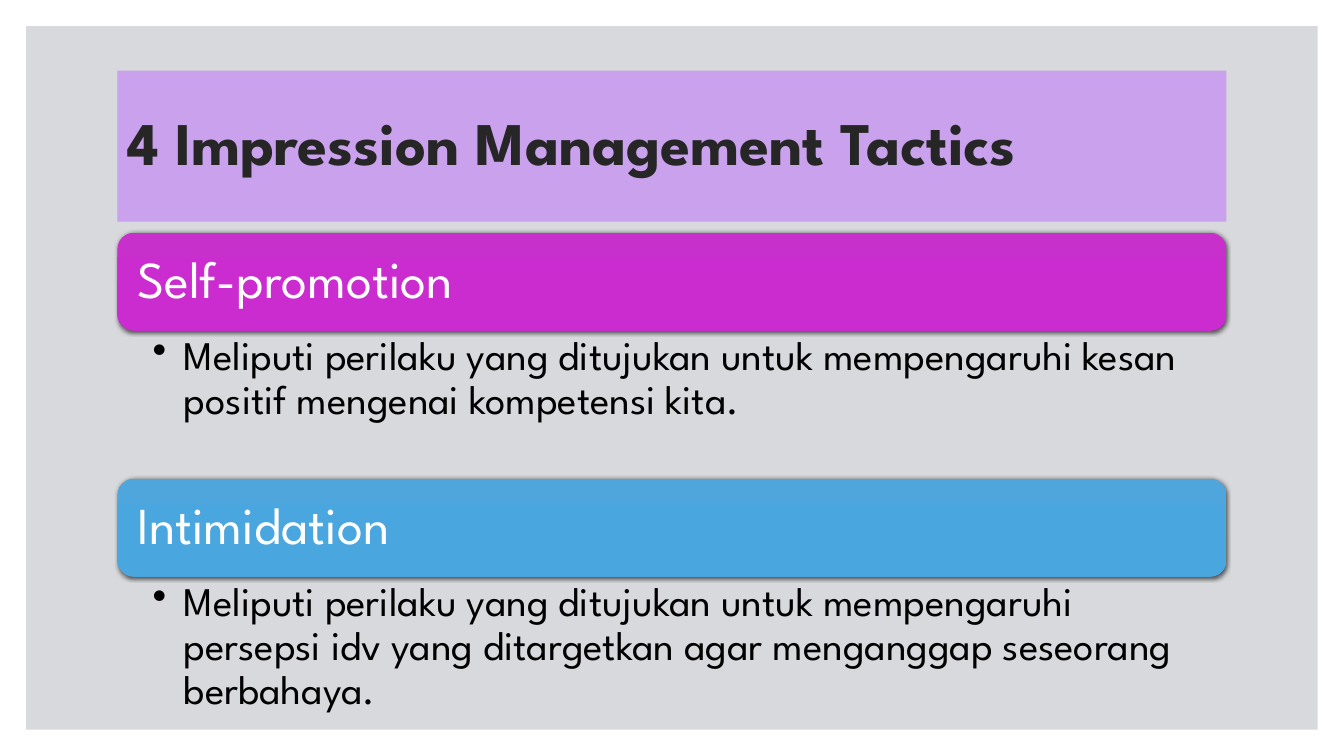
from copy import deepcopy
from dataclasses import dataclass

from lxml import etree
from pptx import Presentation
from pptx.dml.color import RGBColor
from pptx.enum.shapes import MSO_SHAPE
from pptx.enum.text import MSO_ANCHOR, PP_ALIGN
from pptx.oxml import parse_xml
from pptx.oxml.ns import nsdecls, qn
from pptx.util import Inches, Pt

RECTANGLE, ROUNDED = MSO_SHAPE.RECTANGLE, MSO_SHAPE.ROUNDED_RECTANGLE
TOP, MIDDLE = MSO_ANCHOR.TOP, MSO_ANCHOR.MIDDLE
LEFT = PP_ALIGN.LEFT

TITLE = "4 Impression Management Tactics"
TACTICS = [
    ("Self-promotion",
     "Meliputi perilaku yang ditujukan untuk mempengaruhi kesan positif mengenai kompetensi kita.",
     ("C830CC", "CB2CCF", "CA2CCE")),
    ("Intimidation",
     "Meliputi perilaku yang ditujukan untuk mempengaruhi persepsi idv yang ditargetkan "
     "agar menganggap seseorang berbahaya.",
     ("4EA6DC", "4AA6DF", "4AA5DE")),
]


@dataclass(frozen=True)
class Theme:
    font: str = "League Spartan"
    panel: str = "D8D9DC"
    title_fill: str = "CAA1EC"
    title_text: str = "262626"
    header_text: str = "FFFFFF"
    body_text: str = "000000"
    title_size: float = 43.2
    header_size: float = 37
    body_size: float = 29


THEME = Theme()
WIDTH, HEIGHT = 13.33, 7.5
MARGIN = 0.26
CONTENT_WIDTH = 11
CONTENT_LEFT = (WIDTH - CONTENT_WIDTH) / 2
TITLE_TOP, TITLE_HEIGHT = 0.7, 1.5
TACTICS_TOP = 2.31
HEADER_HEIGHT, BODY_HEIGHT = 0.97, 1.47
BULLET_INDENT = 0.31


def add_block(slide, kind, left, top, width, height, color=None):
    shape = slide.shapes.add_shape(kind, *map(Inches, (left, top, width, height)))
    shape.shadow.inherit = False
    shape.line.fill.background()
    if color:
        shape.fill.solid()
        shape.fill.fore_color.rgb = RGBColor.from_string(color)
    return shape


def write(shape, text, size, color, anchor, insets, bold=False):
    frame = shape.text_frame
    frame.text = text
    frame.word_wrap = True
    frame.vertical_anchor = anchor
    frame.margin_left, frame.margin_top, frame.margin_right, frame.margin_bottom = map(Inches, insets)
    paragraph = frame.paragraphs[0]
    paragraph.alignment = LEFT
    paragraph.line_spacing = 0.9
    font = paragraph.runs[0].font
    font.name, font.size, font.bold = THEME.font, Pt(size), bold
    font.color.rgb = RGBColor.from_string(color)
    return paragraph


def shade(shape, colors):
    shape.fill.gradient()
    shape.fill.gradient_angle = 270
    first = shape.fill.gradient_stops[0]
    stops = shape.element.spPr.find(qn("a:gradFill")).find(qn("a:gsLst"))
    stops.insert(1, deepcopy(stops[0]))
    for stop, color, position in zip(shape.fill.gradient_stops, colors, (0, 0.5, 1)):
        stop.color.rgb = RGBColor.from_string(color)
        stop.position = position


def add_shadow(shape):
    effects = shape.element.spPr.find(qn("a:effectLst"))
    effects.append(parse_xml(
        f'<a:outerShdw {nsdecls("a")} blurRad="{Pt(3)}" dist="{Pt(1)}" dir="5400000" '
        'algn="ctr" rotWithShape="0"><a:srgbClr val="000000"><a:alpha val="63000"/>'
        '</a:srgbClr></a:outerShdw>'))


def add_bullet(paragraph):
    properties = paragraph._p.get_or_add_pPr()
    properties.set("marL", str(Inches(BULLET_INDENT)))
    properties.set("indent", str(-Inches(BULLET_INDENT)))
    etree.SubElement(properties, qn("a:buChar"), char="•")


def add_tactic(slide, top, name, description, colors):
    header = add_block(slide, ROUNDED, CONTENT_LEFT, top, CONTENT_WIDTH, HEADER_HEIGHT)
    shade(header, colors)
    add_shadow(header)
    write(header, name, THEME.header_size, THEME.header_text, MIDDLE, (0.15, 0.15, 0.15, 0.15))
    body = slide.shapes.add_textbox(*map(Inches, (
        CONTENT_LEFT, top + HEADER_HEIGHT, CONTENT_WIDTH, BODY_HEIGHT)))
    add_bullet(write(body, description, THEME.body_size, THEME.body_text, TOP,
                     (0.35, 0.05, 0.29, 0.05)))


def main():
    presentation = Presentation()
    presentation.slide_width, presentation.slide_height = Inches(WIDTH), Inches(HEIGHT)
    slide = presentation.slides.add_slide(presentation.slide_layouts[6])
    add_block(slide, RECTANGLE, MARGIN, MARGIN, WIDTH - 2 * MARGIN, HEIGHT - 2 * MARGIN, THEME.panel)
    title = add_block(slide, RECTANGLE, CONTENT_LEFT, TITLE_TOP, CONTENT_WIDTH, TITLE_HEIGHT,
                      THEME.title_fill)
    write(title, TITLE, THEME.title_size, THEME.title_text, MIDDLE, (0.1, 0.05, 0.1, 0.05), True)
    for row, tactic in enumerate(TACTICS):
        add_tactic(slide, TACTICS_TOP + row * (HEADER_HEIGHT + BODY_HEIGHT), *tactic)
    presentation.save("out.pptx")


if __name__ == "__main__":
    main()
